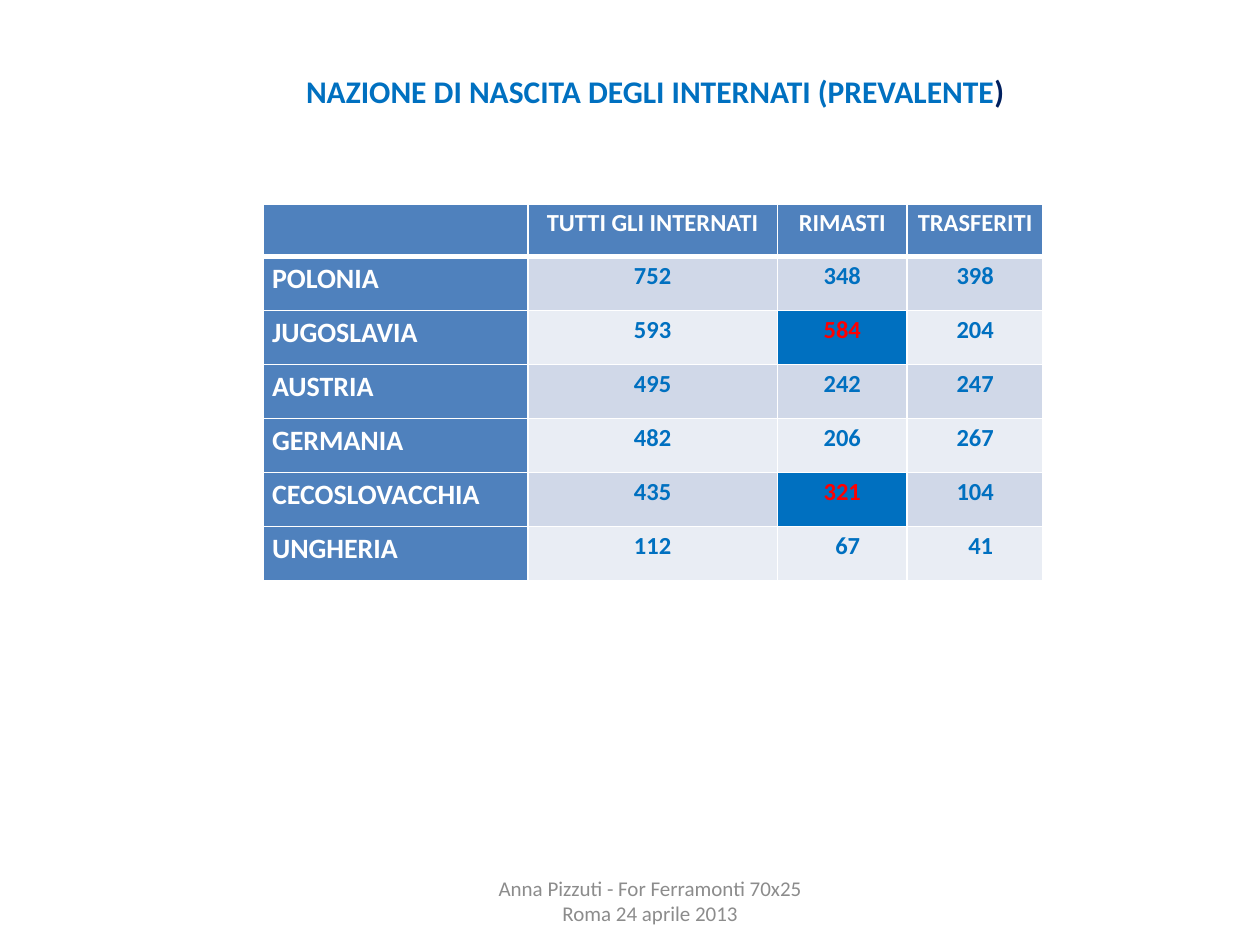
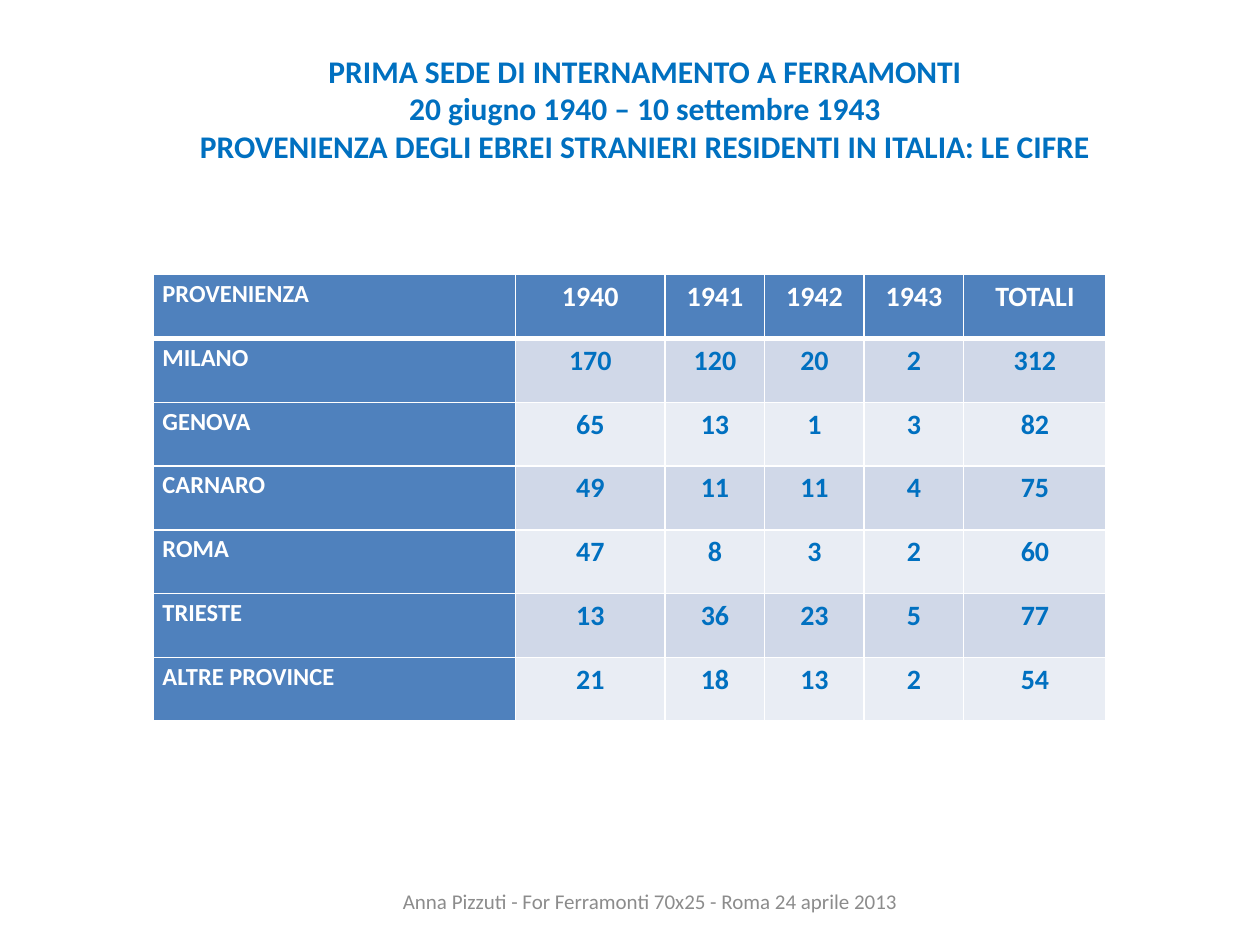
import pptx
import pptx.dml.color
import pptx.enum.text
import pptx.oxml
import pptx.oxml.ns
import pptx.util

Pt = pptx.util.Pt
ANCHOR = pptx.enum.text.MSO_ANCHOR
ALIGN = pptx.enum.text.PP_ALIGN

FONT = "Calibri"
COLORS = {
    "title": "0070C0",
    "title_end": "002060",
    "header": "4F81BD",
    "header_text": "FFFFFF",
    "border": "FFFFFF",
    "band_dark": "D0D8E8",
    "band_light": "E9EDF4",
    "value": "0070C0",
    "marked": "0070C0",
    "marked_text": "FF0000",
    "footer": "8C8C8C",
}

BIRTH_NATIONS = [
    ["", "TUTTI GLI INTERNATI", "RIMASTI", "TRASFERITI"],
    ["POLONIA", "752", "348", "398"],
    ["JUGOSLAVIA", "593", "584", "204"],
    ["AUSTRIA", "495", "242", "247"],
    ["GERMANIA", "482", "206", "267"],
    ["CECOSLOVACCHIA", "435", "321", "104"],
    ["UNGHERIA", "112", "67", "41"],
]
ORIGINS = [
    ["PROVENIENZA", "1940", "1941", "1942", "1943", "TOTALI"],
    ["MILANO", "170", "120", "20", "2", "312"],
    ["GENOVA", "65", "13", "1", "3", "82"],
    ["CARNARO", "49", "11", "11", "4", "75"],
    ["ROMA", "47", "8", "3", "2", "60"],
    ["TRIESTE", "13", "36", "23", "5", "77"],
    ["ALTRE PROVINCE", "21", "18", "13", "2", "54"],
]


def rgb(name):
    return pptx.dml.color.RGBColor.from_string(COLORS[name])


def add_run(p, text, size, color, bold=False):
    r = p.add_run()
    r.text = text
    r.font.name = FONT
    r.font.size = Pt(size)
    r.font.bold = bold
    r.font.color.rgb = rgb(color)


def add_lines(slide, box, lines, size, color, bold=False):
    """Add a centred text box whose lines share one paragraph."""
    sp = slide.shapes.add_textbox(*[Pt(v) for v in box])
    tf = sp.text_frame
    tf.word_wrap = True
    p = tf.paragraphs[0]
    p.alignment = ALIGN.CENTER
    for i, line in enumerate(lines):
        if i:
            p.add_line_break()
        add_run(p, line, size, color, bold)
    return tf


def add_title(slide, box, lines):
    tf = add_lines(slide, box, lines, 18, "title", bold=True)
    tf.auto_size = pptx.enum.text.MSO_AUTO_SIZE.SHAPE_TO_FIT_TEXT
    return tf


def add_footer(slide, lines):
    tf = add_lines(slide, (195.84, 500.4, 351.36, 28.8), lines, 12, "footer")
    tf.vertical_anchor = ANCHOR.MIDDLE


def set_borders(cell, top, bottom):
    """Draw the four cell edges, which must precede the fill in the XML."""
    tc_pr = cell._tc.get_or_add_tcPr()
    ns = pptx.oxml.ns.nsdecls("a")
    edges = (("lnL", 1), ("lnR", 1), ("lnT", top), ("lnB", bottom))
    for i, (tag, width) in enumerate(edges):
        tc_pr.insert(i, pptx.oxml.parse_xml(
            f'<a:{tag} {ns} w="{Pt(width)}"><a:solidFill>'
            f'<a:srgbClr val="{COLORS["border"]}"/></a:solidFill></a:{tag}>'))


def fill_cell(cell, text, size, fill, color, align):
    cell.margin_left = cell.margin_right = Pt(5)
    cell.margin_top = cell.margin_bottom = 0
    cell.fill.solid()
    cell.fill.fore_color.rgb = rgb(fill)
    p = cell.text_frame.paragraphs[0]
    p.alignment = align
    p.line_spacing = 1.15
    if text:
        add_run(p, text, size, color, bold=True)


def add_data_table(slide, left, top, widths, heights, rows,
                   label_sizes, value_size, marked=()):
    """Add a banded table; label_sizes are for the corner and row labels."""
    frame = slide.shapes.add_table(len(rows), len(widths), Pt(left), Pt(top),
                                   Pt(sum(widths)), Pt(sum(heights)))
    table = frame.table
    for column, width in zip(table.columns, widths):
        column.width = Pt(width)
    for row, height in zip(table.rows, heights):
        row.height = Pt(height)
    for i, row in enumerate(rows):
        for j, text in enumerate(row):
            cell = table.cell(i, j)
            if i == 0 or j == 0:
                fill, color = "header", "header_text"
            elif (i, j) in marked:
                fill, color = "marked", "marked_text"
            else:
                fill, color = "band_dark" if i % 2 else "band_light", "value"
            size = value_size if j else label_sizes[min(i, 1)]
            fill_cell(cell, text, size, fill, color,
                      ALIGN.CENTER if j else ALIGN.LEFT)
            set_borders(cell, 3 if i == 1 else 1, 3 if i == 0 else 1)
    return table


def build_birth_nations(slide):
    tf = add_title(slide, (138.96, 37.44, 470.88, 28.8),
                   ["NAZIONE DI NASCITA DEGLI INTERNATI (PREVALENTE"])
    add_run(tf.paragraphs[0], ")", 18, "title_end", bold=True)
    table = add_data_table(slide, 150.48, 116.64, [151.2, 142.56, 74.16, 77.76],
                           [30] + [30.86] * 6, BIRTH_NATIONS, (14, 16), 14,
                           marked={(2, 2), (5, 2)})
    for j in (2, 3):  # two-digit values line up with the units above
        table.cell(6, j).margin_left = Pt(11.3)
    add_footer(slide, ["Anna Pizzuti - For Ferramonti 70x25",
                       "Roma 24 aprile 2013"])


def build_origins(slide):
    add_data_table(slide, 87.84, 156.96, [206.64, 85.68] + [56.88] * 3 + [81.36],
                   [36.46] * 7, ORIGINS, (14, 14), 16)
    add_title(slide, (87.84, 25.92, 561.6, 72.72),
              ["PRIMA SEDE DI INTERNAMENTO A FERRAMONTI",
               "20 giugno 1940 – 10 settembre 1943",
               "PROVENIENZA DEGLI EBREI STRANIERI RESIDENTI IN ITALIA: LE CIFRE"])
    add_footer(slide, ["Anna Pizzuti - For Ferramonti 70x25 - Roma 24 aprile 2013"])


def main():
    prs = pptx.Presentation()
    prs.slide_width, prs.slide_height = Pt(720), Pt(540)
    for build in (build_birth_nations, build_origins):
        build(prs.slides.add_slide(prs.slide_layouts[6]))
    prs.save("out.pptx")


if __name__ == "__main__":
    main()
